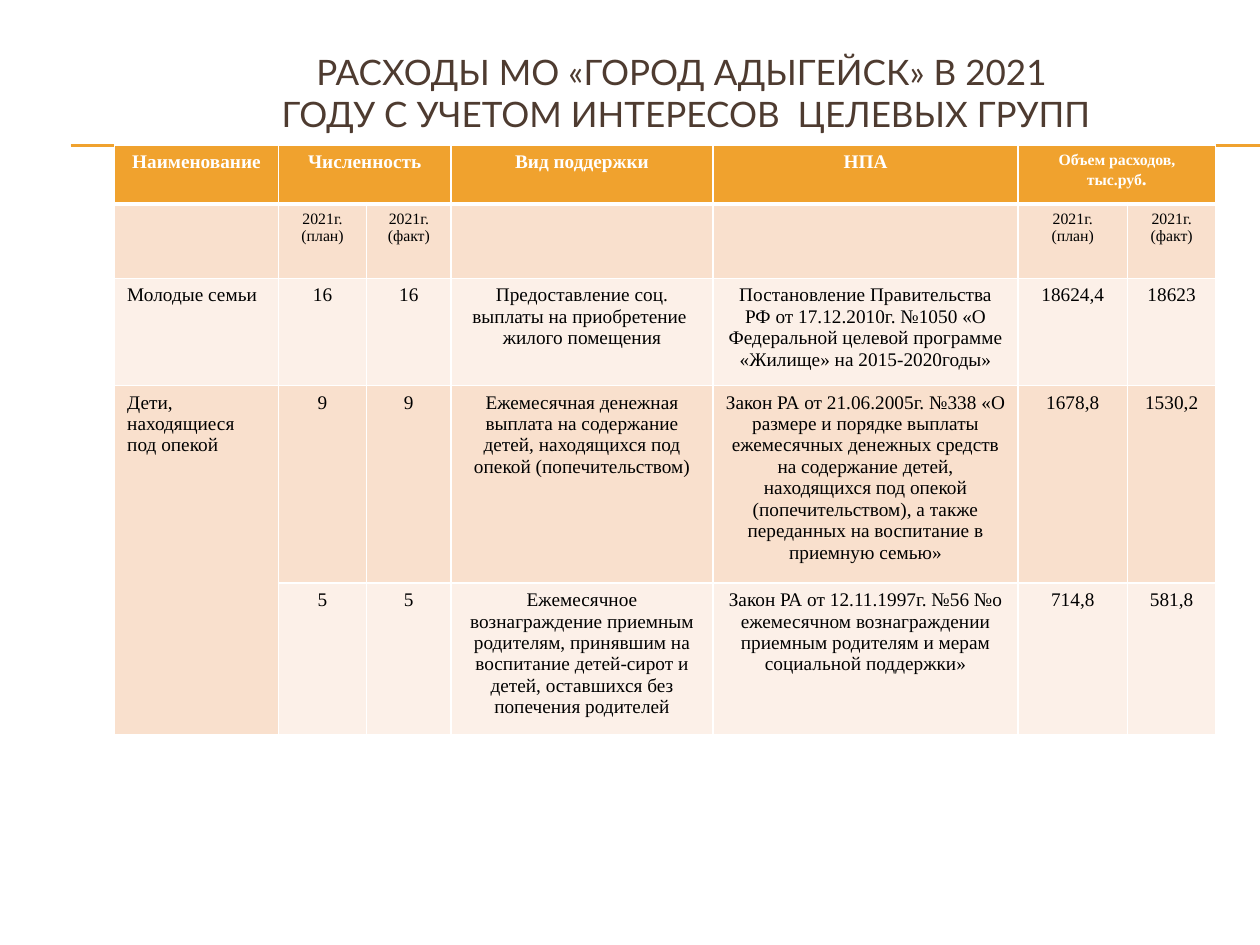
import dataclasses

import lxml.etree
import pptx
import pptx.dml.color
import pptx.enum.shapes
import pptx.enum.text
import pptx.oxml.ns
import pptx.util

Inches = pptx.util.Inches
Pt = pptx.util.Pt
ALIGN = pptx.enum.text.PP_ALIGN


@dataclasses.dataclass(frozen=True)
class Theme:
    accent: str = "F0A22E"
    title: str = "4E3B30"
    white: str = "FFFFFF"
    black: str = "000000"
    bands: tuple = ("F9E0CD", "FCF0E8")
    title_font: str = "Lato"
    table_font: str = "Times New Roman"
    title_size: int = 20
    body_size: int = 11
    small_size: int = 9
    border: int = 1
    header_border: int = 3


THEME = Theme()
COLUMN_WIDTHS = (1.3, 0.7, 0.67, 2.08, 2.42, 0.87, 0.7)
ROW_HEIGHTS = (0.47, 0.59, 0.85, 1.46, 1.13)
PLAN, FACT = "2021г. (план)", "2021г. (факт)"
ROWS = (
    ("Наименование", "Численность", "", "Вид поддержки", "НПА", "Объем расходов, тыс.руб", ""),
    ("", PLAN, FACT, "", "", PLAN, FACT),
    ("Молодые семьи", "16", "16",
     "Предоставление соц. выплаты на приобретение  жилого помещения",
     "Постановление Правительства РФ от 17.12.2010г. №1050 «О Федеральной целевой "
     "программе «Жилище» на 2015-2020годы»",
     "18624,4", "18623"),
    ("Дети, находящиеся под опекой", "9", "9",
     "Ежемесячная денежная выплата на содержание детей, находящихся под опекой "
     "(попечительством)",
     "Закон РА от 21.06.2005г. №338 «О размере и порядке выплаты ежемесячных денежных "
     "средств на содержание детей, находящихся под опекой (попечительством), а также "
     "переданных на воспитание в приемную семью»",
     "1678,8", "1530,2"),
    ("", "5", "5",
     "Ежемесячное вознаграждение приемным родителям, принявшим на воспитание "
     "детей-сирот и детей, оставшихся без попечения родителей",
     "Закон РА от 12.11.1997г. №56 №о ежемесячном вознаграждении приемным родителям "
     "и мерам социальной поддержки»",
     "714,8", "581,8"),
)
MERGES = (((0, 1), (0, 2)), ((0, 5), (0, 6)), ((3, 0), (4, 0)))


def rgb(color):
    return pptx.dml.color.RGBColor.from_string(color)


def add_run(paragraph, text, font, size, color, bold=False):
    run = paragraph.add_run()
    run.text = text
    run.font.name = font
    run.font.size = Pt(size)
    run.font.bold = bold
    run.font.color.rgb = rgb(color)


def add_rule(slide, top):
    line = slide.shapes.add_connector(
        pptx.enum.shapes.MSO_CONNECTOR.STRAIGHT,
        Inches(0.56), Inches(top), Inches(10), Inches(top))
    line.line.color.rgb = rgb(THEME.accent)
    line.line.width = Pt(0.75)
    lxml.etree.SubElement(line.element.spPr, pptx.oxml.ns.qn("a:effectLst"))


def add_title(slide, lines):
    box = slide.shapes.add_textbox(Inches(1.85), Inches(0.02), Inches(7.12), Inches(1.42))
    frame = box.text_frame
    frame.word_wrap = True
    frame.vertical_anchor = pptx.enum.text.MSO_ANCHOR.MIDDLE
    paragraph = frame.paragraphs[0]
    paragraph.alignment = ALIGN.CENTER
    for index, line in enumerate(lines):
        if index:
            paragraph.add_line_break()
        add_run(paragraph, line, THEME.title_font, THEME.title_size, THEME.title)


def set_borders(cell, top, bottom):
    properties = cell._tc.get_or_add_tcPr()
    widths = {"lnL": THEME.border, "lnR": THEME.border, "lnT": top, "lnB": bottom}
    for index, (side, width) in enumerate(widths.items()):
        border = lxml.etree.Element(pptx.oxml.ns.qn("a:" + side), w=str(Pt(width)))
        fill = lxml.etree.SubElement(border, pptx.oxml.ns.qn("a:solidFill"))
        lxml.etree.SubElement(fill, pptx.oxml.ns.qn("a:srgbClr"), val=THEME.white)
        properties.insert(index, border)


def fill_cell(cell, text, row, column):
    header = row == 0
    cell.fill.solid()
    cell.fill.fore_color.rgb = rgb(THEME.accent if header else THEME.bands[(row - 1) % 2])
    set_borders(cell,
                THEME.header_border if row == 1 else THEME.border,
                THEME.header_border if header else THEME.border)
    if not text:
        return
    expenses = header and column == 5
    size = THEME.small_size if row == 1 or expenses else THEME.body_size
    color = THEME.white if header else THEME.black
    paragraph = cell.text_frame.paragraphs[0]
    paragraph.alignment = ALIGN.CENTER if header or column else ALIGN.LEFT
    add_run(paragraph, text, THEME.table_font, size, color, header)
    if expenses:
        add_run(paragraph, ".", THEME.table_font, THEME.body_size, color, header)


def add_spending_table(slide):
    frame = slide.shapes.add_table(
        len(ROWS), len(COLUMN_WIDTHS), Inches(0.91), Inches(1.15),
        Inches(sum(COLUMN_WIDTHS)), Inches(sum(ROW_HEIGHTS)))
    table = frame.table
    for column, width in zip(table.columns, COLUMN_WIDTHS):
        column.width = Inches(width)
    for row, height in zip(table.rows, ROW_HEIGHTS):
        row.height = Inches(height)
    for row, texts in enumerate(ROWS):
        for column, text in enumerate(texts):
            fill_cell(table.cell(row, column), text, row, column)
    for first, last in MERGES:
        table.cell(*first).merge(table.cell(*last))


def main():
    presentation = pptx.Presentation()
    presentation.slide_width = Inches(10)
    presentation.slide_height = Inches(7.5)
    slide = presentation.slides.add_slide(presentation.slide_layouts[6])
    for top in (1.15, 1.16):
        add_rule(slide, top)
    add_title(slide, ("РАСХОДЫ МО «ГОРОД АДЫГЕЙСК» В 2021",
                      " ГОДУ С УЧЕТОМ ИНТЕРЕСОВ  ЦЕЛЕВЫХ ГРУПП"))
    add_spending_table(slide)
    presentation.save("out.pptx")


if __name__ == "__main__":
    main()
